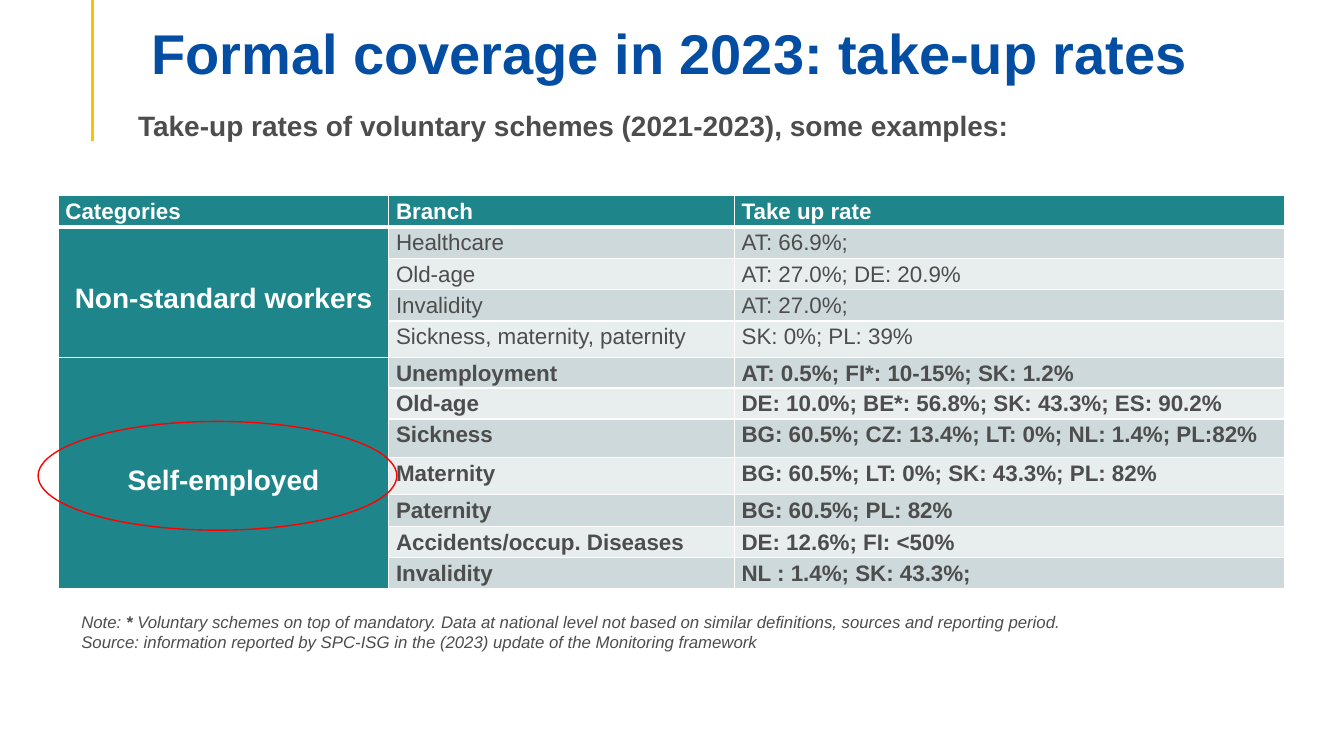
from lxml.etree import SubElement
from pptx import Presentation
from pptx.dml.color import RGBColor
from pptx.enum.shapes import MSO_CONNECTOR, MSO_SHAPE
from pptx.enum.text import MSO_ANCHOR, MSO_AUTO_SIZE, PP_ALIGN
from pptx.oxml.ns import qn
from pptx.util import Cm, Pt

BLUE, GREY, WHITE, TEAL = "034EA2", "4D4D4D", "FFFFFF", "1E858B"
BANDS = ["CDD9DA", "E8EDEE"]
HEADERS = ["Categories", "Branch", "Take up rate"]
CATEGORIES = [
    ("Non-standard workers", 1.3, False, [
        ("Healthcare", "AT: 66.9%;"),
        ("Old-age", "AT: 27.0%; DE: 20.9%"),
        ("Invalidity", "AT: 27.0%;"),
        ("Sickness, maternity, paternity", "SK: 0%; PL: 39%"),
    ]),
    ("Self-employed", 2.6, True, [
        ("Unemployment", "AT: 0.5%; FI*: 10-15%; SK: 1.2%"),
        ("Old-age", "DE: 10.0%; BE*: 56.8%; SK: 43.3%; ES: 90.2%"),
        ("Sickness", "BG: 60.5%; CZ: 13.4%; LT: 0%; NL: 1.4%; PL:82%"),
        ("Maternity", "BG: 60.5%; LT: 0%; SK: 43.3%; PL: 82%"),
        ("Paternity", "BG: 60.5%; PL: 82%"),
        ("Accidents/occup. Diseases", "DE: 12.6%; FI: <50%"),
        ("Invalidity", "NL : 1.4%; SK: 43.3%;"),
    ]),
]
COLUMN_WIDTHS = [8.33, 8.71, 13.87]
ROW_HEIGHTS = [0.79] * 4 + [0.91, 0.77, 0.77, 0.97, 0.94] + [0.79] * 3


def color(value):
    return RGBColor.from_string(value)


class SlideBuilder:
    font_name = "Arial"

    def __init__(self, presentation):
        self.slide = presentation.slides.add_slide(presentation.slide_layouts[5])

    def place(self, shape, box):
        shape.left, shape.top, shape.width, shape.height = [Cm(length) for length in box]

    def run(self, paragraph, text, size, fill, bold=False, italic=False):
        run = paragraph.add_run()
        run.text = text
        font = run.font
        font.name, font.size, font.bold, font.italic = self.font_name, Pt(size), bold, italic
        font.color.rgb = color(fill)

    def title(self, box, text):
        shape = self.slide.shapes.title
        self.place(shape, box)
        frame = shape.text_frame
        frame.auto_size = MSO_AUTO_SIZE.NONE
        frame.word_wrap = True
        frame.vertical_anchor = MSO_ANCHOR.BOTTOM
        frame.margin_bottom = 0
        paragraph = frame.paragraphs[0]
        paragraph.alignment = PP_ALIGN.LEFT
        paragraph.line_spacing = 0.9
        self.run(paragraph, text, 40, BLUE, bold=True)

    def text(self, box, size, runs, italic=False):
        frame = self.slide.shapes.add_textbox(*[Cm(length) for length in box]).text_frame
        frame.word_wrap = True
        for text, bold in runs:
            self.run(frame.paragraphs[0], text, size, GREY, bold, italic)

    def line(self, start, end, fill, width):
        connector = self.slide.shapes.add_connector(
            MSO_CONNECTOR.STRAIGHT, *[Cm(length) for length in start + end])
        connector.line.color.rgb = color(fill)
        connector.line.width = Pt(width)
        SubElement(connector._element.spPr, qn("a:effectLst"))

    def ellipse(self, box, rotation, fill):
        shape = self.slide.shapes.add_shape(MSO_SHAPE.OVAL, *[Cm(length) for length in box])
        shape.rotation = rotation
        shape.shadow.inherit = False
        shape.fill.background()
        shape.line.color.rgb = color(fill)
        shape.line.width = Pt(1)

    def table(self, left, top, widths, heights):
        box = [left, top, sum(widths), sum(heights)]
        table = self.slide.shapes.add_table(
            len(heights), len(widths), *[Cm(length) for length in box]).table
        for column, width in zip(table.columns, widths):
            column.width = Cm(width)
        for row, height in zip(table.rows, heights):
            row.height = Cm(height)
        return table

    def borders(self, cell, top, bottom):
        properties = cell._tc.get_or_add_tcPr()
        for side, width in (("L", 1), ("R", 1), ("T", top), ("B", bottom)):
            border = SubElement(properties, qn(f"a:ln{side}"), w=str(Pt(width)))
            SubElement(SubElement(border, qn("a:solidFill")), qn("a:srgbClr"), val=WHITE)

    def cell(self, table, row, column, text, fill, text_color, bold,
             size=16, margin_top=0, alignment=PP_ALIGN.LEFT):
        cell = table.cell(row, column)
        self.borders(cell, 3 if row == 1 else 1, 3 if row == 0 else 1)
        cell.fill.solid()
        cell.fill.fore_color.rgb = color(fill)
        cell.margin_left = cell.margin_right = Cm(0.18)
        cell.margin_top, cell.margin_bottom = Cm(margin_top), 0
        paragraph = cell.text_frame.paragraphs[0]
        paragraph.alignment = alignment
        paragraph.line_spacing = 1.15
        paragraph.space_after = Pt(10)
        self.run(paragraph, text, size, text_color, bold)
        return cell


def main():
    presentation = Presentation()
    presentation.slide_width, presentation.slide_height = Cm(33.87), Cm(19.05)
    builder = SlideBuilder(presentation)
    builder.line((2.34, 0), (2.34, 3.56), "FFC000", 2.25)
    builder.title((3.56, 0, 30.3, 2.18), "Formal coverage in 2023: take-up rates")
    builder.text((1.8, 15.29, 25.48, 1.8), 12, [
        ("Note: ", False),
        ("* ", True),
        ("Voluntary schemes on top of mandatory. Data at national level not based on similar "
         "definitions, sources and reporting period. Source: information reported by SPC-ISG "
         "in the (2023) update of the Monitoring framework", False),
    ], italic=True)
    builder.text((3.23, 2.62, 23.62, 1.12), 20, [
        ("Take-up rates of voluntary schemes (2021-2023), some examples:", True)])

    table = builder.table(1.47, 4.93, COLUMN_WIDTHS, ROW_HEIGHTS)
    for column, header in enumerate(HEADERS):
        builder.cell(table, 0, column, header, TEAL, WHITE, True)
    first_row = 1
    for category, margin_top, bold, branches in CATEGORIES:
        label = builder.cell(table, first_row, 0, category, TEAL, WHITE, True,
                             20, margin_top, PP_ALIGN.CENTER)
        label.merge(table.cell(first_row + len(branches) - 1, 0))
        for row, branch in enumerate(branches, first_row):
            for column, text in enumerate(branch, 1):
                builder.cell(table, row, column, text, BANDS[(row - 1) % 2], GREY, bold)
        first_row += len(branches)

    builder.ellipse((4.11, 7.47, 2.74, 9.04), 90, "FF0000")
    presentation.save("out.pptx")


if __name__ == "__main__":
    main()
